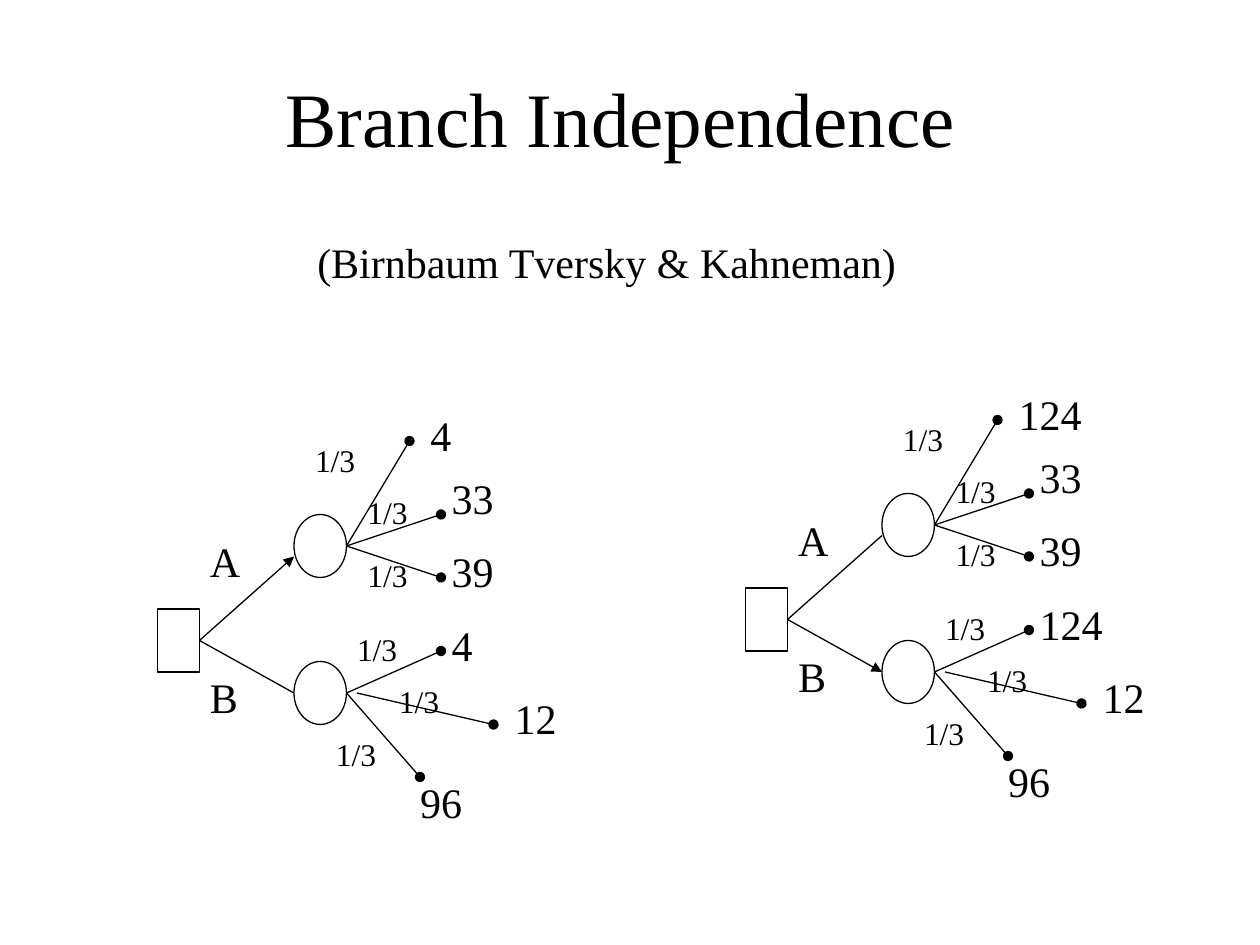
from dataclasses import dataclass
from lxml.etree import SubElement
from pptx import Presentation
from pptx.dml.color import RGBColor
from pptx.enum.shapes import MSO_CONNECTOR, MSO_SHAPE
from pptx.enum.text import MSO_ANCHOR, MSO_AUTO_SIZE, PP_ALIGN
from pptx.oxml.ns import qn
from pptx.util import Inches, Pt


@dataclass(frozen=True)
class Theme:
    font: str = "Times New Roman"
    ink: RGBColor = RGBColor(0, 0, 0)
    title: int = 44
    body: int = 24
    small: int = 18
    line: float = 0.75


def apply(target, values):
    for name, value in values.items():
        setattr(target, name, value)


def grid(*steps):
    """Turn grid steps, twelve to the inch, into lengths."""
    return [Inches(step / 12) for step in steps]


class Board:
    def __init__(self, slide, theme):
        self.slide, self.theme = slide, theme
        self.shapes = slide.shapes
        self.x = self.y = 0

    def start(self, x, y):
        """Open a group whose parts are placed from grid point x, y."""
        self.shapes = self.slide.shapes.add_group_shape().shapes
        self.x, self.y = x, y

    def spot(self, x, y):
        return grid(self.x + x, self.y + y)

    def text(self, box, words, size, frame=None, para=None):
        body = self.shapes.add_textbox(*box).text_frame
        apply(body, {"word_wrap": True, **(frame or {})})
        line = body.paragraphs[0]
        apply(line, para or {})
        run = line.add_run()
        run.text = words
        apply(run.font, {"name": self.theme.font, "size": Pt(size)})
        run.font.color.rgb = self.theme.ink
        return line

    def label(self, x, y, words, size):
        """Add a short text with a hanging indent and half a line above."""
        frame = {"margin_left": 0, "margin_top": 0,
                 "margin_right": Inches(0.1), "margin_bottom": 0}
        box = self.spot(x, y) + grid(14, 6)
        props = self.text(box, words, size, frame)._p.get_or_add_pPr()
        props.set("marL", str(Inches(0.81)))
        props.set("indent", str(Inches(-0.31)))
        space = SubElement(props, qn("a:spcBef"))
        SubElement(space, qn("a:spcPct")).set("val", "50000")

    def stroke(self, line):
        line.color.rgb = self.theme.ink
        line.width = Pt(self.theme.line)

    def node(self, kind, x, y, wide):
        shape = self.shapes.add_shape(kind, *self.spot(x, y), *grid(wide, 6))
        shape.shadow.inherit = False
        shape.fill.background()
        self.stroke(shape.line)

    def branch(self, start, end, head=None):
        link = self.shapes.add_connector(
            MSO_CONNECTOR.STRAIGHT, *self.spot(*start), *self.spot(*end))
        self.stroke(link.line)
        if head:
            SubElement(link.line._ln, qn("a:tailEnd")).set("type", head)
        SubElement(link._element.spPr, qn("a:effectLst"))


# Choice name, its place, the end of its branch, the top of its circle
CHOICES = [("A", (-1, 12), (13, 14), 10), ("B", (-1, 25), (13, 27), 24)]

# Branch start, branch end, place of the chance, place of the prize, prize
PRIZES = [
    ((18, 13), (24, 3), (9, 3), (20, 0), None),
    ((18, 13), (27, 10), (14, 8), (22, 6), "33"),
    ((18, 13), (27, 16), (14, 14), (22, 13), "39"),
    ((18, 27), (27, 23), (13, 21), (22, 20), None),
    ((19, 27), (32, 30), (17, 26), (28, 27), "12"),
    ((18, 27), (25, 35), (11, 31), (19, 35), "96"),
]


def tree(board, x, y, common, chosen):
    """Draw a decision tree; both choices share the common prize."""
    theme = board.theme
    board.start(x, y)
    board.node(MSO_SHAPE.RECTANGLE, 0, 19, 4)
    for name, place, end, top in CHOICES:
        board.branch((4, 22), end, "triangle" if name == chosen else None)
        board.node(MSO_SHAPE.OVAL, 13, top, 5)
        board.label(*place, name, theme.body)
    for start, end, odds, place, prize in PRIZES:
        board.branch(start, end, "oval")
        board.label(*odds, "1/3", theme.small)
        board.label(*place, prize or common, theme.body)


def main():
    deck = Presentation()
    apply(deck, {"slide_width": Inches(10), "slide_height": Inches(7.5)})
    theme = Theme()
    board = Board(deck.slides.add_slide(deck.slide_layouts[6]), theme)
    middle = {"vertical_anchor": MSO_ANCHOR.MIDDLE}
    board.text([Inches(n) for n in (0.5, 0.3, 9, 1.25)],
               "Branch Independence ", theme.title, middle,
               {"alignment": PP_ALIGN.CENTER})
    board.text([Inches(n) for n in (2.42, 1.83, 4.8, 0.5)],
               "(Birnbaum Tversky & Kahneman)", theme.body,
               {**middle, "word_wrap": False,
                "auto_size": MSO_AUTO_SIZE.SHAPE_TO_FIT_TEXT})
    tree(board, 15, 39, "4", "A")
    tree(board, 71, 37, "124", "B")
    deck.save("out.pptx")


if __name__ == "__main__":
    main()
